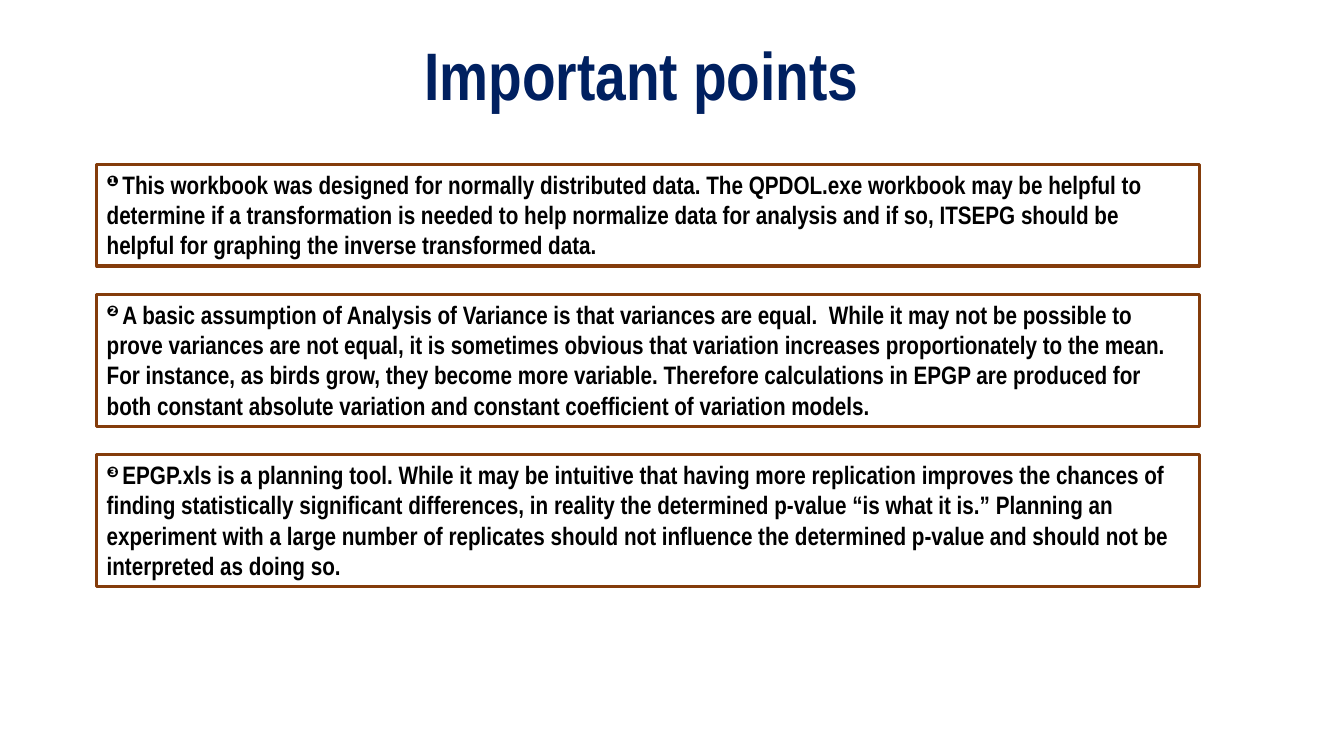
from dataclasses import dataclass

from pptx import Presentation
from pptx.dml.color import RGBColor
from pptx.enum.shapes import MSO_SHAPE
from pptx.enum.text import MSO_ANCHOR, MSO_AUTO_SIZE, PP_ALIGN
from pptx.util import Inches, Pt

RECTANGLE = MSO_SHAPE.RECTANGLE
TOP, MIDDLE = MSO_ANCHOR.TOP, MSO_ANCHOR.MIDDLE
LEFT, CENTER = PP_ALIGN.LEFT, PP_ALIGN.CENTER
NO_AUTO_SIZE = MSO_AUTO_SIZE.NONE
GROW_SHAPE = MSO_AUTO_SIZE.SHAPE_TO_FIT_TEXT

TITLE = "Important points"
POINTS = [
    ("❶ ", 3, "This workbook was designed for normally distributed data. The QPDOL.exe workbook may be "
     "helpful to determine if a transformation is needed to help normalize data for analysis and if so, "
     "ITSEPG should be helpful for graphing the inverse transformed data."),
    ("❷ ", 4, "A basic assumption of Analysis of Variance is that variances are equal.  While it may not be "
     "possible to prove variances are not equal, it is sometimes obvious that variation increases "
     "proportionately to the mean.  For instance, as birds grow, they become more variable. Therefore "
     "calculations in EPGP are produced for both constant absolute variation and constant coefficient of "
     "variation models."),
    ("❸ ", 4, "EPGP.xls is a planning tool. While it may be intuitive that having more replication improves "
     "the chances of finding statistically significant differences, in reality the determined p-value "
     "“is what it is.” Planning an experiment with a large number of replicates should not influence the "
     "determined p-value and should not be interpreted as doing so."),
]


@dataclass(frozen=True)
class Theme:
    font: str = "Arial Narrow"
    title_color: RGBColor = RGBColor(0x00, 0x20, 0x60)
    text_color: RGBColor = RGBColor(0x00, 0x00, 0x00)
    border_color: RGBColor = RGBColor(0x84, 0x3C, 0x0B)
    title_size: int = 48
    text_size: int = 18
    border_width: float = 2.25


THEME = Theme()
BOX_LEFT, BOX_TOP, BOX_WIDTH, BOX_GAP = 0.96, 1.63, 10.94, 0.28
LINE_HEIGHT, BOX_PADDING = 0.3, 0.11


def style_span(span, size, color):
    span.font.name = THEME.font
    span.font.size = Pt(size)
    span.font.bold = True
    span.font.color.rgb = color


def add_title(page):
    title = page.shapes.title
    title.left, title.top = Inches(3.72), Inches(0.44)
    title.width, title.height = Inches(5.29), Inches(0.69)
    frame = title.text_frame
    frame.text = TITLE
    frame.word_wrap = True
    frame.auto_size = NO_AUTO_SIZE
    frame.vertical_anchor = MIDDLE
    para = frame.paragraphs[0]
    para.alignment = CENTER
    para.line_spacing = 0.9
    style_span(para.runs[0], THEME.title_size, THEME.title_color)


def add_point(page, top, height, marker, text):
    box = page.shapes.add_shape(
        RECTANGLE, Inches(BOX_LEFT), Inches(top), Inches(BOX_WIDTH), Inches(height))
    box.shadow.inherit = False
    box.fill.background()
    box.line.color.rgb = THEME.border_color
    box.line.width = Pt(THEME.border_width)
    frame = box.text_frame
    frame.word_wrap = True
    frame.auto_size = GROW_SHAPE
    frame.vertical_anchor = TOP
    para = frame.paragraphs[0]
    para.alignment = LEFT
    for content, baseline in ((marker, "30000"), (text, "0")):
        span = para.add_run()
        span.text = content
        style_span(span, THEME.text_size, THEME.text_color)
        span.font._element.set("baseline", baseline)


def main():
    deck = Presentation()
    deck.slide_width, deck.slide_height = Inches(13.33), Inches(7.5)
    page = deck.slides.add_slide(deck.slide_layouts[5])
    add_title(page)
    top = BOX_TOP
    for marker, line_count, text in POINTS:
        height = line_count * LINE_HEIGHT + BOX_PADDING
        add_point(page, top, height, marker, text)
        top += height + BOX_GAP
    deck.save("out.pptx")


if __name__ == "__main__":
    main()
